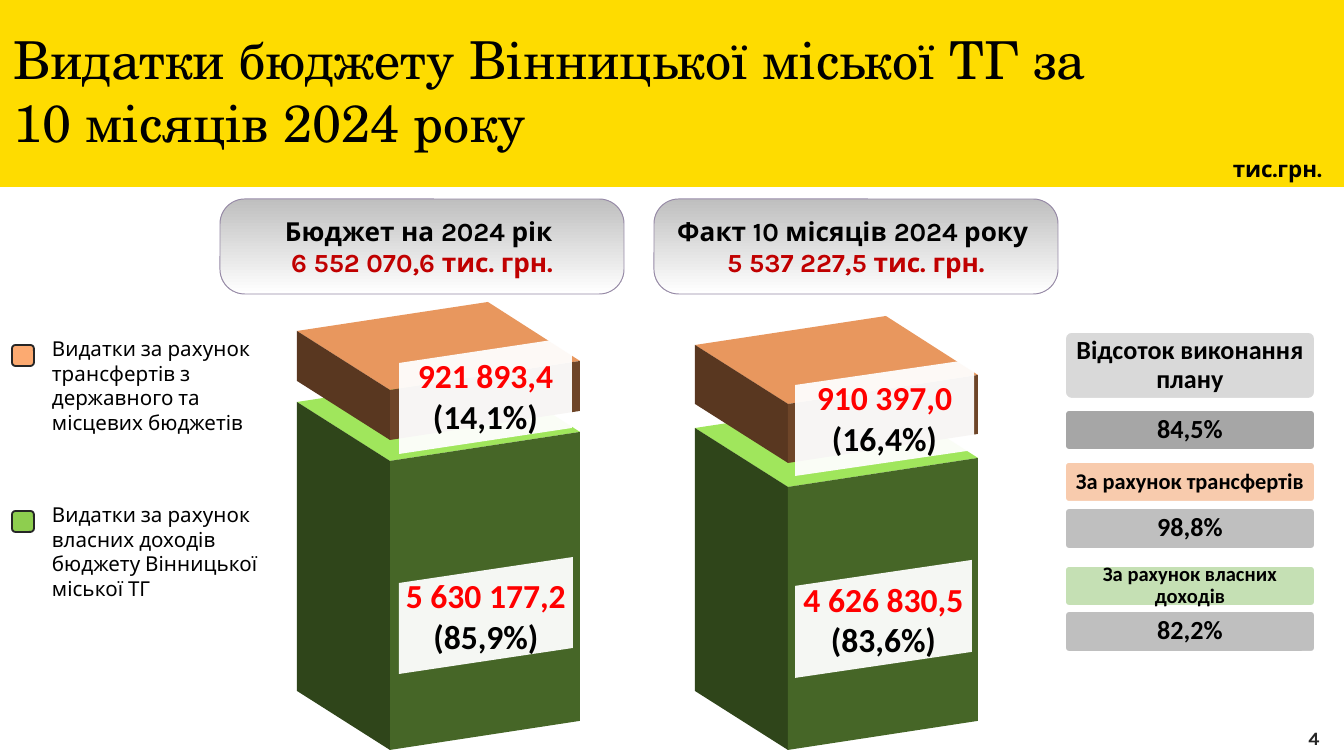
from lxml.etree import SubElement
from pptx import Presentation
from pptx.dml.color import RGBColor
from pptx.enum.shapes import MSO_SHAPE as Shape
from pptx.enum.text import MSO_ANCHOR as Anchor, MSO_AUTO_SIZE as AutoSize, PP_ALIGN as Align
from pptx.oxml.ns import qn
from pptx.util import Emu, Pt

SCALE = 914400 / 134.4
TITLE_FONT, BODY_FONT, FIGURE_FONT = "TeX Gyre Schola", "Karla", "Calibri"
GREEN = {"top": "A0E65C", "left": "2F451A", "right": "466627"}
ORANGE = {"top": "E8975E", "left": "593720", "right": "6E4528"}


def px(value):
    return Emu(round(value * SCALE))


def color(value):
    return RGBColor.from_string(value)


def paint(shape, fill, line=None, width=1, alpha=None):
    shape.shadow.inherit = False
    shape.fill.solid()
    shape.fill.fore_color.rgb = color(fill)
    if alpha:
        tint = shape.fill.fore_color._xFill.find(qn("a:srgbClr"))
        SubElement(tint, qn("a:alpha"), val=str(alpha * 1000))
    if line:
        shape.line.color.rgb = color(line)
        shape.line.width = Pt(width)
    else:
        shape.line.fill.background()


def write(shape, lines, font, align=Align.CENTER, anchor=Anchor.MIDDLE,
          wrap=True, margins=(13, 7), spacing=None):
    """Fill a shape with lines given as (text, size, color, bold)."""
    frame = shape.text_frame
    across, down = map(px, margins)
    settings = {"word_wrap": wrap, "auto_size": AutoSize.NONE, "vertical_anchor": anchor,
                "margin_left": across, "margin_right": across,
                "margin_top": down, "margin_bottom": down}
    for name, value in settings.items():
        setattr(frame, name, value)
    for index, (text, size, ink, bold) in enumerate(lines):
        paragraph = frame.paragraphs[0] if index == 0 else frame.add_paragraph()
        paragraph.text = text
        paragraph.alignment = align
        if spacing:
            paragraph.line_spacing = spacing
        for name, value in {"name": font, "size": Pt(size), "bold": bold}.items():
            setattr(paragraph.font, name, value)
        paragraph.font.color.rgb = color(ink)


def add_shape(slide, kind, box):
    return slide.shapes.add_shape(kind, *map(px, box))


def add_text(slide, box, lines, **options):
    write(slide.shapes.add_textbox(*map(px, box)), lines, BODY_FONT, **options)


def add_polygon(slide, points, fill, alpha=None):
    builder = slide.shapes.build_freeform(*points[0], scale=SCALE)
    builder.add_line_segments(points[1:], close=True)
    shape = builder.convert_to_shape()
    paint(shape, fill, alpha=alpha)
    return shape


def add_header(slide, box):
    left, top, width, height = box
    title = slide.shapes.title
    band = add_shape(slide, Shape.RECTANGLE, box)
    paint(band, "FEDC00")
    title.element.addprevious(band.element)
    place = {"left": left, "top": top + 20, "width": width, "height": height - 47}
    for name, value in place.items():
        setattr(title, name, px(value))
    write(title, [("Видатки бюджету Вінницької міської ТГ за \v10 місяців 2024 року",
                   28, "000000", False)], TITLE_FONT, Align.LEFT)
    add_text(slide, (left + width - 126, top + height - 38, 117, 40),
             [("тис.грн.", 12, "000000", True)], align=Align.RIGHT, wrap=False)


def add_total(slide, box, heading, total):
    card = add_shape(slide, Shape.ROUNDED_RECTANGLE, box)
    card.adjustments[0] = 0.26
    paint(card, "FFFFFF", "9689A6", 0.5)
    card.fill.gradient()
    card.fill.gradient_angle = 270
    for stop, (position, tint) in zip(card.fill.gradient_stops, [(0, "BFBFBF"), (1, "FFFFFF")]):
        stop.position = position
        stop.color.rgb = color(tint)
    write(card, [(heading, 14, "000000", True), (total, 14, "C00000", True)],
          BODY_FONT, wrap=False)


def add_block(slide, left, top, depth, shades):
    """Draw a solid with a top face and two visible sides."""
    west, north = (left, top + 29), (left + 191, top)
    east, south = (left + 283, top + 59), (left + 93, top + 88)

    def side(start, end):
        return [start, end, (end[0], end[1] + depth), (start[0], start[1] + depth)]

    faces = {"top": [west, north, east, south], "left": side(west, south),
             "right": side(south, east)}
    for name, points in faces.items():
        add_polygon(slide, points, shades[name])


def add_plate(slide, box, amount, share):
    left, top, width, height = box
    right, slope = left + width, 26
    plate = add_polygon(slide, [(left, top + slope), (right, top),
                                (right, top + height - slope), (left, top + height)],
                        "FFFFFF", alpha=95)
    write(plate, [(amount, 18, "FF0000", True), (share, 18, "000000", True)],
          FIGURE_FONT, wrap=False, margins=(0, 0))


def add_column(slide, left, blocks, plates):
    for top, depth, shades in blocks:
        add_block(slide, left, top, depth, shades)
    for (offset, top, width, height), amount, share in plates:
        add_plate(slide, (left + offset, top, width, height), amount, share)


def add_legend_item(slide, box, fill, text):
    left, top, width, height = box
    marker = add_shape(slide, Shape.ROUNDED_RECTANGLE, (left, top + 17, 22, 21))
    paint(marker, fill, "262626")
    add_text(slide, (left + 24, top, width - 24, height), [(text, 11, "000000", False)],
             align=Align.LEFT, anchor=Anchor.TOP, margins=(16, 8))


def add_completion(slide, box, rows):
    """Stack labels and percentages given as (offset, height, fill, text, size)."""
    left, top, width = box
    for offset, height, fill, text, size in rows:
        bar = add_shape(slide, Shape.ROUNDED_RECTANGLE, (left, top + offset, width, height))
        bar.adjustments[0] = 0.1
        paint(bar, fill, "FFFFFF")
        write(bar, [(text, size, "000000", True)], FIGURE_FONT, margins=(9, 0), spacing=0.9)


def main():
    presentation = Presentation()
    presentation.slide_width, presentation.slide_height = px(1344), px(756)
    slide = presentation.slides.add_slide(presentation.slide_layouts[5])

    add_header(slide, (0, 0, 1344, 187))
    add_total(slide, (220, 199, 404, 95), "Бюджет на 2024 рік ", "6 552 070,6 тис. грн.")
    add_total(slide, (654, 199, 404, 95), "Факт 10 місяців 2024 року ", "5 537 227,5 тис. грн.")

    add_column(slide, 297, [(373, 289, GREEN), (302, 50, ORANGE)],
               [((102, 337, 173, 117), "921 893,4", "(14,1%)"),
                ((102, 557, 174, 117), "5 630 177,2", "(85,9%)")])
    add_column(slide, 695, [(399, 263, GREEN), (316, 59, ORANGE)],
               [((100, 359, 179, 117), "910 397,0", "(16,4%)"),
                ((100, 560, 177, 118), "4 626 830,5", "(83,6%)")])

    add_legend_item(slide, (12, 328, 278, 115), "FCAA71",
                    "Видатки за рахунок трансфертів з державного та місцевих бюджетів")
    add_legend_item(slide, (12, 494, 280, 115), "8ECE4F",
                    "Видатки за рахунок власних доходів бюджету Вінницької міської ТГ")

    add_completion(slide, (1065, 332, 250), [
        (0, 67, "D9D9D9", "Відсоток виконання плану", 14),
        (78, 40, "A6A6A6", "84,5%", 14),
        (130, 40, "F8CBAD", "За рахунок трансфертів", 12),
        (176, 41, "BFBFBF", "98,8%", 14),
        (234, 40, "C5E0B4", "За рахунок власних доходів", 11),
        (279, 41, "BFBFBF", "82,2%", 14),
    ])
    add_text(slide, (1285, 720, 58, 36), [("4", 10, "262626", True)])
    presentation.save("out.pptx")


if __name__ == "__main__":
    main()
